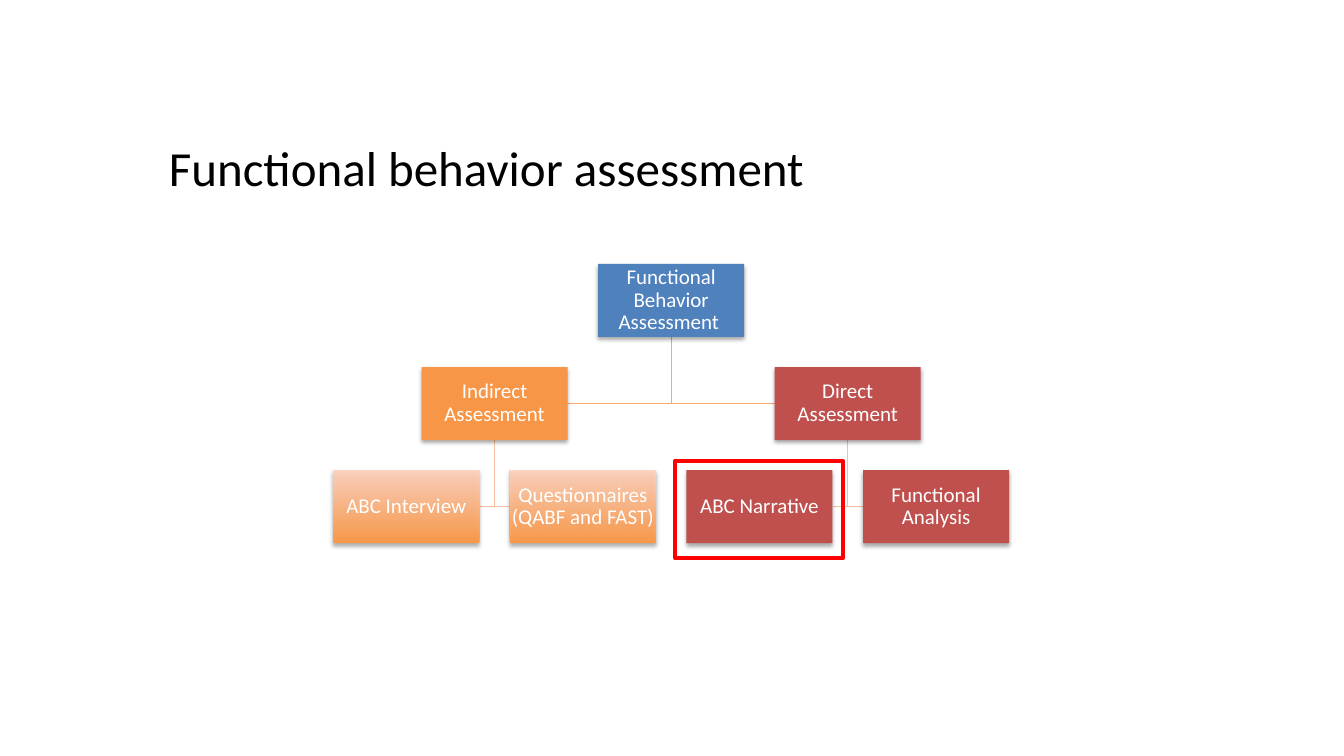
import pptx
import pptx.dml.color
import pptx.enum.shapes
import pptx.enum.text
import pptx.oxml
import pptx.util
from dataclasses import dataclass

Cm = pptx.util.Cm
Pt = pptx.util.Pt
RGB = pptx.dml.color.RGBColor.from_string
RECTANGLE = pptx.enum.shapes.MSO_SHAPE.RECTANGLE
CENTER = pptx.enum.text.PP_ALIGN.CENTER
NAMESPACE = 'xmlns:a="http://schemas.openxmlformats.org/drawingml/2006/main"'


@dataclass(frozen=True)
class Theme:
    font: str = "Calibri"
    title_size: int = 35
    node_size: int = 15
    title: str = "000000"
    node_text: str = "FFFFFF"
    root: str = "4F81BD"
    indirect: str = "F79646"
    direct: str = "C0504D"
    gradient: tuple = ("FF953E", "FFD2BD")
    upper_line: str = "F8A56E"
    lower_line: str = "F9BE9F"
    highlight: str = "FF0000"


theme = Theme()

# Chart grid in centimetres; a column may be a half step
LEFT, TOP = 8.4, 6.65
COLUMN_STEP, ROW_STEP = 4.45, 2.6
WIDTH, HEIGHT = 3.68, 1.84

# name: (text, column, row, fill, parent)
nodes = {
    "root": ("Functional Behavior Assessment ", 1.5, 0, theme.root, None),
    "indirect": ("Indirect Assessment", 0.5, 1, theme.indirect, "root"),
    "interview": ("ABC Interview", 0, 2, theme.gradient, "indirect"),
    "questionnaires": ("Questionnaires (QABF and FAST)", 1, 2, theme.gradient, "indirect"),
    "direct": ("Direct Assessment", 2.5, 1, theme.direct, "root"),
    "narrative": ("ABC Narrative", 2, 2, theme.direct, "direct"),
    "analysis": ("Functional Analysis", 3, 2, theme.direct, "direct"),
}


def corner(name):
    """Return the left and top of a node in centimetres."""
    column, row = nodes[name][1:3]
    return LEFT + column * COLUMN_STEP, TOP + row * ROW_STEP


def write(frame, text, size, color):
    """Put one centred paragraph into a text frame."""
    frame.word_wrap = True
    para = frame.paragraphs[0]
    para.text = text
    para.alignment = CENTER
    para.font.name = theme.font
    para.font.size = Pt(size)
    para.font.color.rgb = RGB(color)
    return para


deck = pptx.Presentation()
deck.slide_width, deck.slide_height = Cm(33.87), Cm(19.05)
page = deck.slides.add_slide(deck.slide_layouts[6])

title = page.shapes.add_textbox(Cm(-2.34), Cm(3.35), Cm(29.21), Cm(3.68))
write(title.text_frame, "Functional behavior assessment", theme.title_size, theme.title)

# Elbow lines: down from the parent, then sideways to the child
for name, (text, column, row, fill, parent) in nodes.items():
    if parent is None:
        continue
    parent_left, parent_top = corner(parent)
    child_left, child_top = corner(name)
    start_x = parent_left + WIDTH / 2
    end_x = child_left if child_left > parent_left else child_left + WIDTH
    end_y = child_top + HEIGHT / 2
    outline = page.shapes.build_freeform(Cm(start_x), Cm(parent_top + HEIGHT))
    outline.add_line_segments([(Cm(start_x), Cm(end_y)), (Cm(end_x), Cm(end_y))], close=False)
    elbow = outline.convert_to_shape()
    elbow.shadow.inherit = False
    elbow.fill.background()
    elbow.line.width = Pt(0.75)
    elbow.line.color.rgb = RGB(theme.upper_line if row == 1 else theme.lower_line)

for name, (text, column, row, fill, parent) in nodes.items():
    left, top = corner(name)
    box = page.shapes.add_shape(RECTANGLE, Cm(left), Cm(top), Cm(WIDTH), Cm(HEIGHT))
    box.line.fill.background()
    if fill == theme.gradient:
        box.fill.gradient()
        box.fill.gradient_angle = 90
        for stop, color in zip(box.fill.gradient_stops, fill):
            stop.color.rgb = RGB(color)
        for color in box.fill._xPr.iterfind(".//{*}gs/{*}srgbClr"):
            color.append(pptx.oxml.parse_xml(f'<a:alpha {NAMESPACE} val="90000"/>'))
    else:
        box.fill.solid()
        box.fill.fore_color.rgb = RGB(fill)

    box.shadow.inherit = False
    box._element.spPr.find("{*}effectLst").append(pptx.oxml.parse_xml(
        f'<a:outerShdw {NAMESPACE} blurRad="{Pt(3.1)}" dist="{Pt(1.8)}" dir="5400000"'
        ' rotWithShape="0"><a:srgbClr val="000000"><a:alpha val="35000"/></a:srgbClr>'
        '</a:outerShdw>'))

    frame = box.text_frame
    frame.margin_left = frame.margin_right = Cm(0.03)
    frame.margin_top = frame.margin_bottom = Cm(0.03)
    frame.vertical_anchor = pptx.enum.text.MSO_ANCHOR.MIDDLE
    write(frame, text, theme.node_size, theme.node_text).line_spacing = 0.9

highlight = page.shapes.add_shape(RECTANGLE, Cm(17.02), Cm(11.61), Cm(4.22), Cm(2.46))
highlight.shadow.inherit = False
highlight.fill.background()
highlight.line.color.rgb = RGB(theme.highlight)
highlight.line.width = Pt(3)

deck.save("out.pptx")
